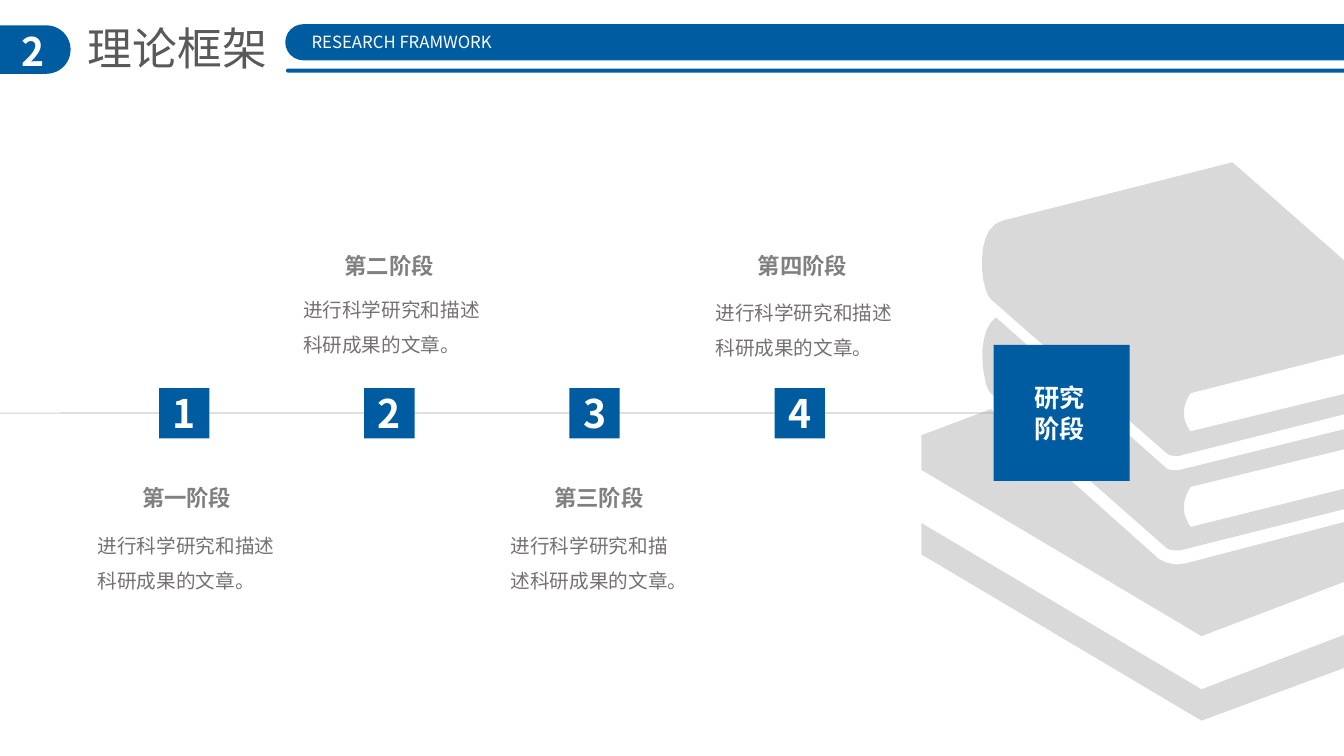
from lxml import etree
from pptx import Presentation
from pptx.dml.color import RGBColor
from pptx.enum import shapes, text
from pptx.oxml.ns import qn
from pptx.util import Cm, Pt

FONT = "Noto Sans CJK SC"
HUES = {"blue": "005CA1", "books": "D9D9D9", "line": "A6A6A6", "white": "FFFFFF",
        "title": "595959", "head": "808080", "body": "767171"}
LEFT, MID = text.PP_ALIGN.LEFT, text.PP_ALIGN.CENTER
RECT, PILL = shapes.MSO_SHAPE.RECTANGLE, shapes.MSO_SHAPE.ROUNDED_RECTANGLE

deck = Presentation()
deck.slide_width, deck.slide_height = Cm(33.87), Cm(19.05)
slide = deck.slides.add_slide(deck.slide_layouts[6])
tree = slide.shapes


def block(kind, box, hue="blue"):
    """Add a preset shape, or a text box when kind is None."""
    place = [Cm(n) for n in box]
    if kind is None:
        return tree.add_textbox(*place)
    item = tree.add_shape(kind, *place)
    item.shadow.inherit = False
    item.fill.solid()
    item.fill.fore_color.rgb = RGBColor.from_string(HUES[hue])
    item.line.fill.background()
    if kind == PILL:
        item.adjustments[0] = 0.5
    return item


def write(item, words, size, hue, bold=False, align=LEFT, space=1.0, **frame):
    """Fill a shape with one paragraph; frame holds text frame settings."""
    for key, value in frame.items():
        setattr(item.text_frame, key, value)
    para = item.text_frame.paragraphs[0]
    para.alignment, para.line_spacing = align, space
    run = para.add_run()
    run.text = words
    for key, value in {"size": Pt(size), "bold": bold, "name": FONT}.items():
        setattr(run.font, key, value)
    run.font.color.rgb = RGBColor.from_string(HUES[hue])
    east = etree.SubElement(run._r.get_or_add_rPr(), qn("a:ea"))
    east.set("typeface", FONT)


# Books, in hundredths of a centimetre: pairs are corners,
# six numbers are a Bezier curve (two controls, then the end).
books = [
    [(3551, 1041), (3551, 1092), (3000, 1227), (2977, 1265, 2979, 1295, 3000, 1328),
     (3551, 1191), (3551, 1242), (2974, 1387), (2962, 1387, 2949, 1387, 2941, 1382),
     (2497, 991), (2477, 975, 2456, 836, 2510, 800), (2941, 1181),
     (2949, 1184, 2962, 1187, 2974, 1184)],
    [(2527, 556), (3106, 409), (3551, 800), (3551, 851), (3000, 991),
     (2977, 1026, 2979, 1057, 3000, 1087), (3551, 953), (3551, 1003), (2974, 1148),
     (2962, 1151, 2949, 1148, 2941, 1143), (2497, 754),
     (2471, 732, 2454, 572, 2527, 556)],
    [(3028, 1737), (2322, 1318), (2322, 1397), (3028, 1816), (3434, 1666), (3434, 1582)],
    [(3640, 1468), (3470, 1529), (3470, 1781), (3553, 1679), (3640, 1717), (3640, 1590),
     (3713, 1562), (3749, 1547, 3762, 1534, 3762, 1501), (3762, 1303),
     (3762, 1288, 3754, 1275, 3741, 1267), (3581, 1173), (3581, 1265), (2987, 1420),
     (2962, 1425, 2929, 1420, 2911, 1400), (2497, 1031), (2322, 1097), (2322, 1184),
     (3028, 1603), (3683, 1354), (3683, 1486), (3640, 1504)],
]
STEPS = 10
pen = None
for outline in books:
    start = outline[0]
    if pen is None:
        pen = tree.build_freeform(*start, scale=Cm(0.01))
    else:
        pen.move_to(*start)
    dots = [start]
    for part in outline[1:]:
        if len(part) == 2:
            dots.append(part)
            continue
        ends = [dots[-1], part[:2], part[2:4], part[4:]]
        for step in range(1, STEPS + 1):
            t = step / STEPS
            pull = [(1 - t) ** 3, 3 * t * (1 - t) ** 2, 3 * t * t * (1 - t), t ** 3]
            dots.append(tuple(sum(w * p[axis] for w, p in zip(pull, ends))
                              for axis in (0, 1)))
    pen.add_line_segments(dots[1:], close=True)
stack = pen.convert_to_shape()
stack.shadow.inherit = False
stack.fill.solid()
stack.fill.fore_color.rgb = RGBColor.from_string(HUES["books"])
stack.line.fill.background()

# Header
mark = block(PILL, (-0.71, 0.64, 2.49, 1.22))
write(mark, "2", 28, "white", True, MID, margin_left=Cm(0.58), margin_right=0,
      margin_top=Cm(0.08), margin_bottom=0)
write(block(None, (1.96, 0.41, 5.08, 1.63)), "理论框架", 32, "title", word_wrap=False)
bar = block(PILL, (7.19, 0.61, 28.02, 0.91))
write(bar, "RESEARCH FRAMWORK", 12, "white", margin_left=Cm(0.53),
      margin_top=0, margin_bottom=0)
block(PILL, (7.21, 1.73, 28.02, 0.1))

# Timeline
goal = block(RECT, (25.04, 8.69, 3.43, 3.43))
write(goal, "研究阶段", 18, "white", True, margin_left=Cm(1.02), margin_right=Cm(1.02),
      word_wrap=True)
axis = tree.add_connector(shapes.MSO_CONNECTOR.STRAIGHT,
                          Cm(-0.36), Cm(10.41), Cm(25.04), Cm(10.41))
axis.end_connect(goal, 1)
axis.line.color.rgb = RGBColor.from_string(HUES["line"])
axis.line.width = Pt(0.5)
etree.SubElement(axis._element.spPr, qn("a:effectLst"))

# Stage: name, left and top of the heading, then left, top and width of the body
stages = [
    ("第一阶段", 3.33, 12.07, 2.21, 13.03, 5.05),
    ("第二阶段", 8.43, 6.22, 7.39, 7.09, 5.18),
    ("第三阶段", 13.72, 12.07, 12.62, 13.03, 4.95),
    ("第四阶段", 18.85, 6.22, 17.78, 7.16, 5.26),
]
for i, (name, x, y, left, top, wide) in enumerate(stages):
    write(block(None, (x, y, 2.79, 0.94)), name, 16, "head", True, word_wrap=False)
    write(block(None, (left, top, wide, 2.06)), "进行科学研究和描述科研成果的文章。",
          14, "body", space=1.5, word_wrap=True)
    tile = block(RECT, (4.01 + 5.17 * i, 9.78, 1.27, 1.27))
    write(tile, str(i + 1), 28, "white", True, MID, margin_left=0, margin_right=0,
          margin_top=0, margin_bottom=0)

deck.save("out.pptx")
